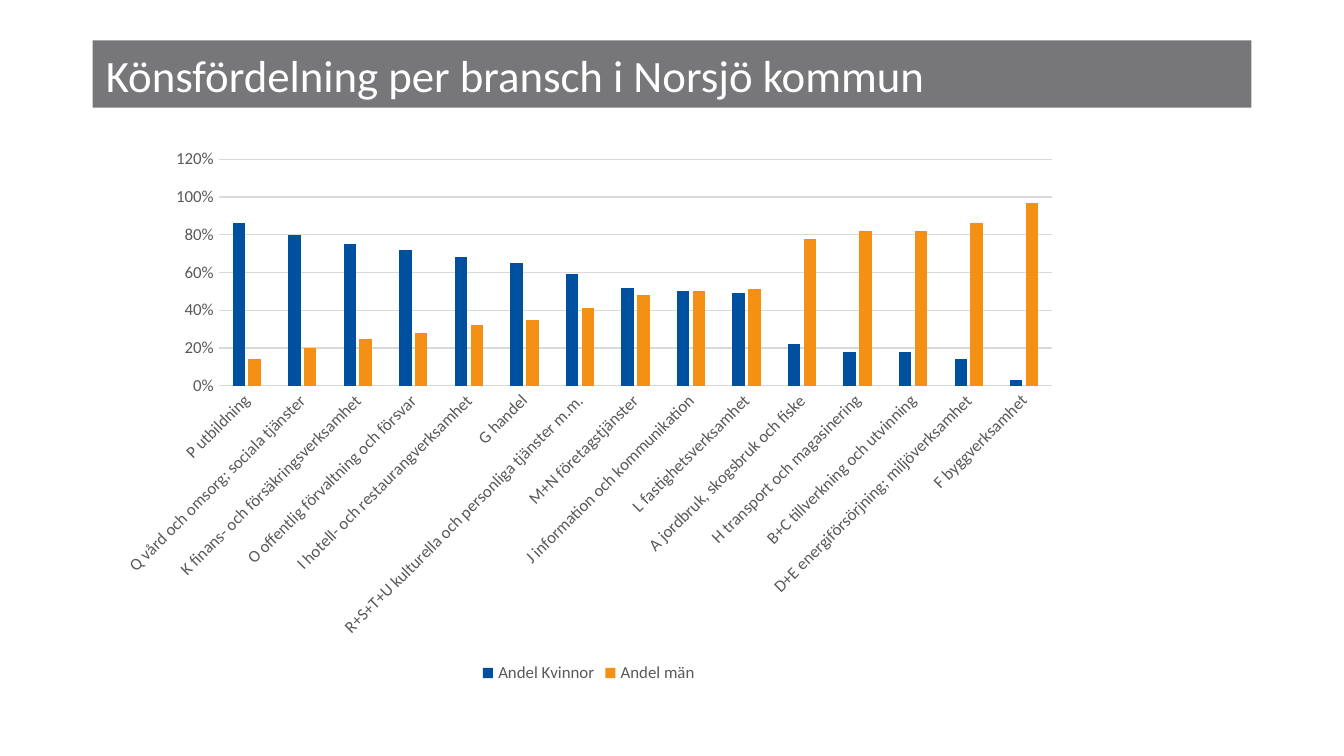
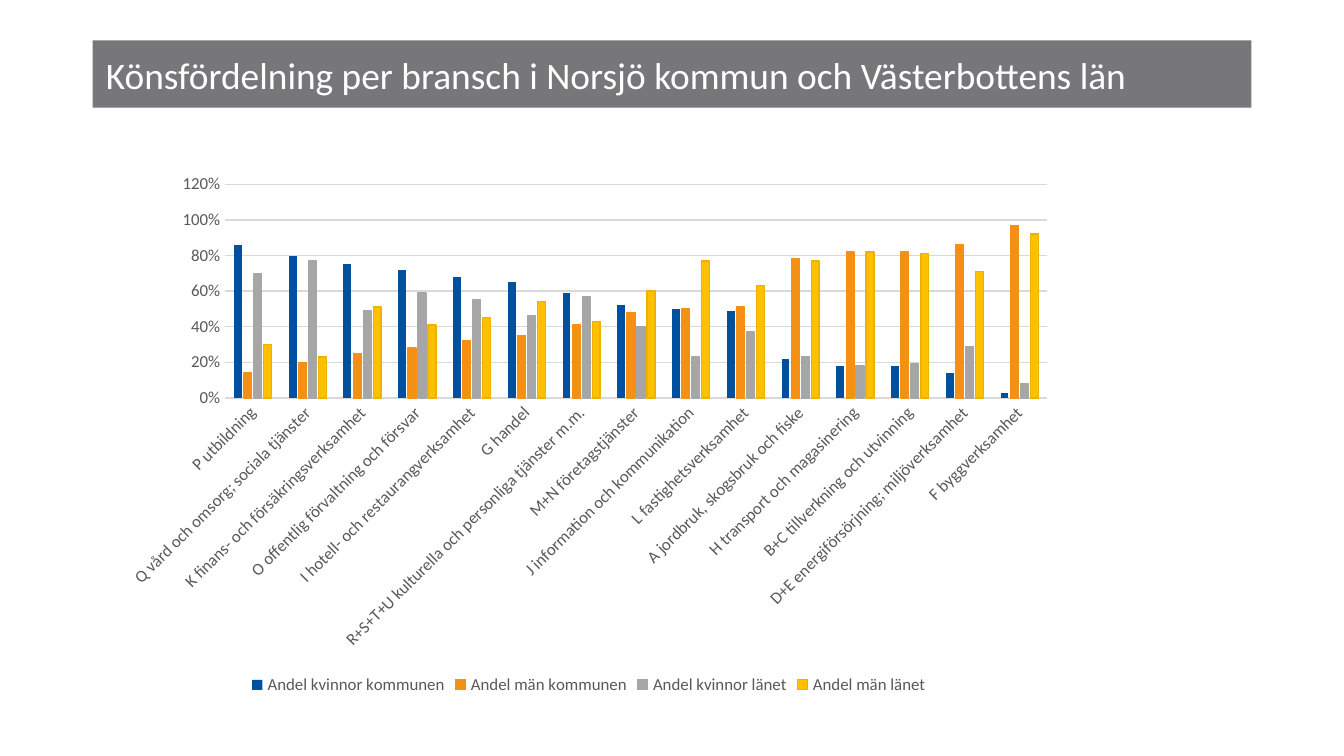
"""Build two slides on the gender split per trade in Norsjö."""
from typing import NamedTuple, Optional

from pptx import Presentation
from pptx.chart.axis import CategoryAxis, ValueAxis
from pptx.chart.data import CategoryChartData
from pptx.dml.color import RGBColor
from pptx.enum.chart import XL_CHART_TYPE, XL_LEGEND_POSITION, XL_TICK_MARK
from pptx.enum.shapes import MSO_SHAPE
from pptx.enum.text import MSO_ANCHOR, PP_ALIGN
from pptx.slide import Slide
from pptx.text.text import Font
from pptx.util import Pt

WHITE = RGBColor(0xFF, 0xFF, 0xFF)
BLACK = RGBColor(0x00, 0x00, 0x00)
BAND = RGBColor(0x77, 0x77, 0x7A)
LABEL = RGBColor(0x59, 0x59, 0x59)
GRID = RGBColor(0xD9, 0xD9, 0xD9)
BLUE = RGBColor(0x00, 0x50, 0xA0)
ORANGE = RGBColor(0xF4, 0x90, 0x14)
GREY = RGBColor(0xA6, 0xA6, 0xA6)
YELLOW = RGBColor(0xFF, 0xC0, 0x00)
GOLD = RGBColor(0xED, 0xB2, 0x00)

FACE = "Calibri"
HAIR = Pt(0.75)
SLANT = "-2700000"

TRADES = (
    "P utbildning",
    "Q vård och omsorg; sociala tjänster",
    "K finans- och försäkringsverksamhet",
    "O offentlig förvaltning och försvar",
    "I hotell- och restaurangverksamhet",
    "G handel",
    "R+S+T+U kulturella och personliga tjänster m.m.",
    "M+N företagstjänster",
    "J information och kommunikation",
    "L fastighetsverksamhet",
    "A jordbruk, skogsbruk och fiske",
    "H transport och magasinering",
    "B+C tillverkning och utvinning",
    "D+E energiförsörjning; miljöverksamhet",
    "F byggverksamhet",
)

Shares = tuple[float, ...]


class Bars(NamedTuple):
    """One series of columns."""
    name: str
    shares: Shares
    fill: RGBColor
    edge: Optional[RGBColor] = None


class Page(NamedTuple):
    """One slide with a title band and a chart."""
    title: str
    size: float
    left: float
    top: float
    width: float
    height: float
    bars: tuple[Bars, ...]


def rest(shares: Shares) -> Shares:
    """Return what each share leaves of the whole."""
    return tuple(round(1 - share, 2) for share in shares)


TOWN = (0.86, 0.8, 0.75, 0.72, 0.68, 0.65, 0.59, 0.52,
        0.5, 0.49, 0.22, 0.18, 0.18, 0.14, 0.03)
COUNTY = (0.7, 0.77, 0.49, 0.59, 0.55, 0.46, 0.57, 0.4,
          0.23, 0.37, 0.23, 0.18, 0.19, 0.29, 0.08)

PAGES = (
    Page("Könsfördelning per bransch i Norsjö kommun", 24, 56.9, 74.2, 517, 294.5, (
        Bars("Andel Kvinnor", TOWN, BLUE),
        Bars("Andel män", rest(TOWN), ORANGE),
    )),
    Page("Könsfördelning per bransch i Norsjö kommun och Västerbottens län",
         20, 59.8, 87.8, 511.2, 287.3, (
             Bars("Andel kvinnor kommunen", TOWN, BLUE),
             Bars("Andel män kommunen", rest(TOWN), ORANGE, ORANGE),
             Bars("Andel kvinnor länet", COUNTY, GREY, GREY),
             Bars("Andel män länet", rest(COUNTY), YELLOW, GOLD),
         )),
)


def style(font: Font, size: float, color: RGBColor) -> None:
    """Set face, size and colour of a font."""
    font.name = FACE
    font.size = Pt(size)
    font.color.rgb = color


def add_title(slide: Slide, text: str, size: float) -> None:
    """Draw the title band."""
    band = slide.shapes.add_shape(
        MSO_SHAPE.RECTANGLE, Pt(49.6), Pt(21.7), Pt(620.8), Pt(36))
    band.shadow.inherit = False
    band.fill.solid()
    band.fill.fore_color.rgb = BAND
    band.line.fill.background()
    frame = band.text_frame
    frame.word_wrap = True
    frame.vertical_anchor = MSO_ANCHOR.MIDDLE
    line = frame.paragraphs[0]
    line.text = text
    line.alignment = PP_ALIGN.LEFT
    style(line.font, size, WHITE)


def style_axes(trades: CategoryAxis, shares: ValueAxis) -> None:
    """Style both axes and slant the trade labels."""
    for axis in (trades, shares):
        axis.major_tick_mark = XL_TICK_MARK.NONE
        axis.minor_tick_mark = XL_TICK_MARK.NONE
        style(axis.tick_labels.font, 9, LABEL)
    trades.format.line.color.rgb = GRID
    trades.format.line.width = HAIR
    body = trades._element.find(".//{*}txPr/{*}bodyPr")
    body.set("rot", SLANT)
    body.set("vert", "horz")
    shares.format.line.fill.background()
    shares.minimum_scale, shares.maximum_scale = 0, 1.2
    shares.major_unit = 0.2
    shares.tick_labels.number_format = "0%"
    shares.tick_labels.number_format_is_linked = False
    shares.has_major_gridlines = True
    grid = shares.major_gridlines.format.line
    grid.color.rgb = GRID
    grid.width = HAIR


def add_bars(slide: Slide, page: Page) -> None:
    """Draw the column chart of a page."""
    data = CategoryChartData(number_format="0%")
    data.categories = TRADES
    for bars in page.bars:
        data.add_series(bars.name, bars.shares)
    chart = slide.shapes.add_chart(
        XL_CHART_TYPE.COLUMN_CLUSTERED, Pt(page.left), Pt(page.top),
        Pt(page.width), Pt(page.height), data).chart
    style(chart.font, 10, BLACK)
    chart.has_title = False
    chart.has_legend = True
    chart.legend.position = XL_LEGEND_POSITION.BOTTOM
    chart.legend.include_in_layout = False
    style(chart.legend.font, 9, LABEL)
    style_axes(chart.category_axis, chart.value_axis)
    plot = chart.plots[0]
    plot.vary_by_categories = False
    plot.gap_width = 219
    plot.overlap = -27
    for series, bars in zip(plot.series, page.bars):
        series.invert_if_negative = False
        series.format.fill.solid()
        series.format.fill.fore_color.rgb = bars.fill
        edge = series.format.line
        if bars.edge is None:
            edge.fill.background()
        else:
            edge.color.rgb = bars.edge
            edge.width = HAIR


def main() -> None:
    """Build and save the deck."""
    deck = Presentation()
    deck.slide_width, deck.slide_height = Pt(720), Pt(405)
    for page in PAGES:
        slide = deck.slides.add_slide(deck.slide_layouts[6])
        add_title(slide, page.title, page.size)
        add_bars(slide, page)
    deck.save("out.pptx")


if __name__ == "__main__":
    main()
